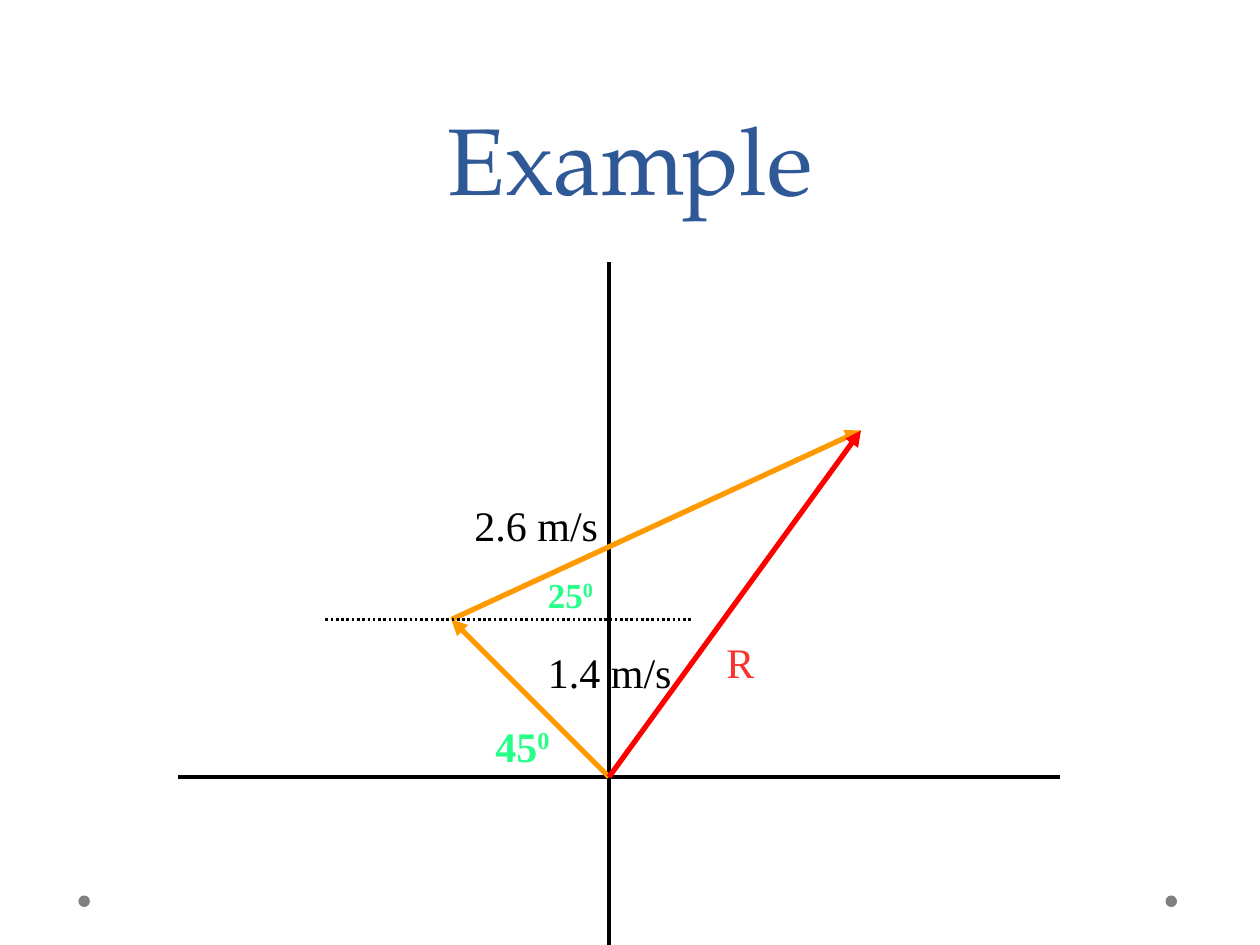
"""Build a slide that adds two velocity vectors on a pair of axes."""
from dataclasses import dataclass

from lxml.etree import SubElement
from pptx import Presentation
from pptx.dml.color import RGBColor
from pptx.enum.dml import MSO_LINE_DASH_STYLE as Dash
from pptx.enum.shapes import MSO_CONNECTOR as Conn, MSO_SHAPE as Shape
from pptx.enum.text import MSO_ANCHOR as Anchor, PP_ALIGN as Align
from pptx.oxml.ns import qn
from pptx.util import Pt


@dataclass(frozen=True)
class Theme:
    title: str = "2F5897"
    ink: str = "000000"
    vector: str = "FF9900"
    total: str = "FF0000"
    label: str = "FA312C"
    angle: str = "26FF88"
    dot: str = "808080"
    head: str = "TeX Gyre Pagella"
    body: str = "Times New Roman"
    big: int = 54
    mid: int = 24
    small: int = 20


theme = Theme()
deck = Presentation()
deck.slide_width, deck.slide_height = Pt(720), Pt(540)
shapes = deck.slides.add_slide(deck.slide_layouts[6]).shapes


def draw_line(start, end, color, width, dash=None, arrow=False):
    line = shapes.add_connector(Conn.STRAIGHT, *map(Pt, start + end))
    line.line.color.rgb = RGBColor.from_string(color)
    line.line.width = Pt(width)
    if dash:
        line.line.dash_style = dash
    if arrow:
        SubElement(line.line._get_or_add_ln(), qn("a:tailEnd"), type="triangle")
    SubElement(line._element.spPr, qn("a:effectLst"))


def add_text(box, text, font, size, color, bold=False, power=""):
    frame = shapes.add_textbox(*map(Pt, box)).text_frame
    frame.word_wrap = True
    para = frame.paragraphs[0]
    for piece in filter(None, (text, power)):
        run = para.add_run()
        run.text = piece
        run.font.name, run.font.size, run.font.bold = font, Pt(size), bold
        run.font.color.rgb = RGBColor.from_string(color)
        if piece == power:
            run._r.get_or_add_rPr().set("baseline", "30000")
    return frame


for left in (666, 44.8):
    dot = shapes.add_shape(Shape.OVAL, Pt(left), Pt(511.7), Pt(6.6), Pt(6.6))
    dot.shadow.inherit = False
    dot.fill.solid()
    dot.fill.fore_color.rgb = RGBColor.from_string(theme.dot)
    dot.line.fill.background()

title = add_text((36, 0, 648, 126), "Example", theme.head, theme.big, theme.title)
title.vertical_anchor = Anchor.BOTTOM
title.paragraphs[0].alignment = Align.CENTER
title.paragraphs[0].line_spacing = Pt(58)

base, bend, tip = (348, 444), (258, 354), (492, 246)
draw_line((102, 444), (606, 444), theme.ink, 2.25)
draw_line((348, 150), (348, 540), theme.ink, 2.25)
draw_line(base, bend, theme.vector, 3, arrow=True)
draw_line(bend, tip, theme.vector, 3, arrow=True)
draw_line((186, 354), (396, 354), theme.ink, 1.5, dash=Dash.ROUND_DOT)

labels = [
    ((276, 408, 66, 36), "45", theme.mid, theme.angle, True, "0"),
    ((306, 324, 66, 31), "25", theme.small, theme.angle, True, "0"),
    ((306, 366, 126, 36), "1.4 m/s", theme.mid, theme.ink, False, ""),
    ((264, 282, 126, 36), "2.6 m/s", theme.mid, theme.ink, False, ""),
    ((408, 360, 66, 36), "R", theme.mid, theme.label, False, ""),
]
for box, text, size, color, bold, power in labels:
    frame = add_text(box, text, theme.body, size, color, bold, power)
    frame.paragraphs[0].space_before = Pt(size / 10)

draw_line(base, tip, theme.total, 3, arrow=True)

deck.save("out.pptx")
